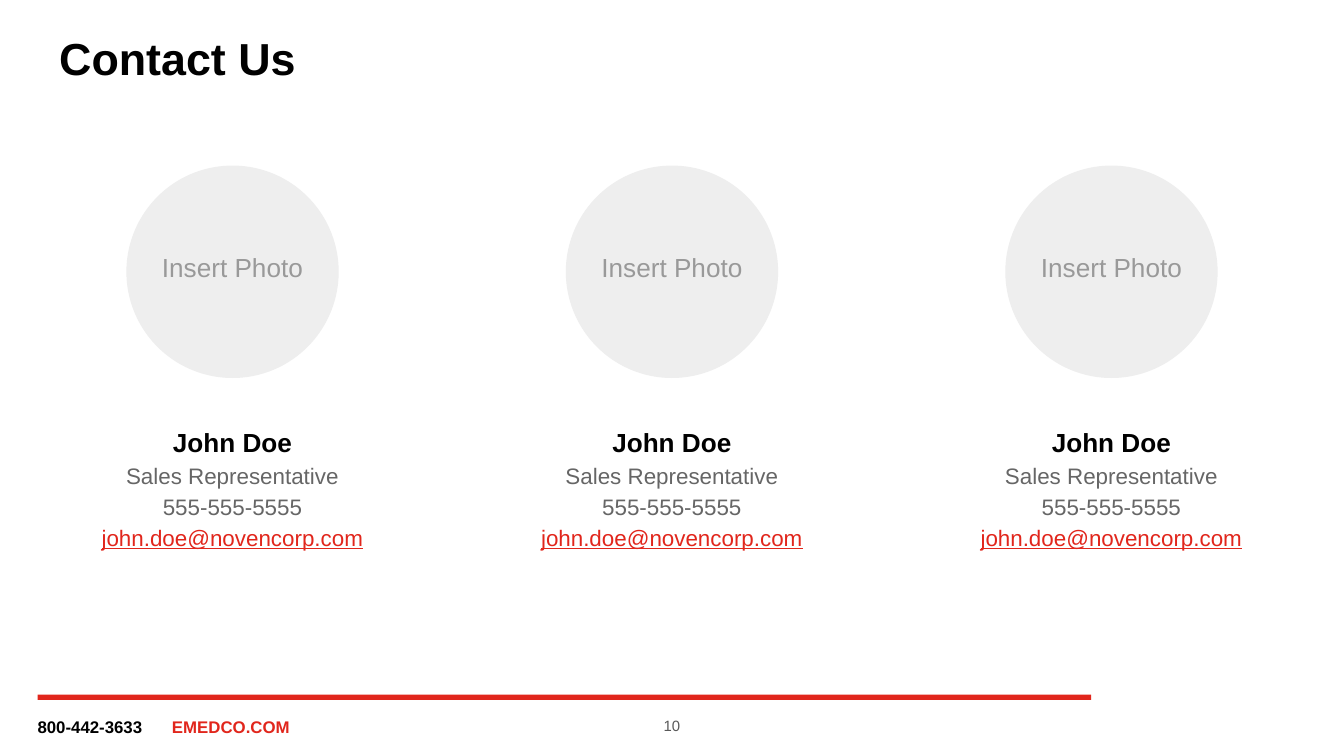
import copy
from dataclasses import dataclass

import pptx
import pptx.dml.color
import pptx.enum.shapes
import pptx.enum.text
import pptx.oxml
import pptx.oxml.ns
import pptx.util

WIDE = pptx.util.Inches(10)
HIGH = pptx.util.Inches(5.625)
FONT = "Arial"
HUES = {
    "red": "E1261C",
    "black": "000000",
    "grey": "666666",
    "page": "595959",
    "hint": "999999",
    "disc": "EEEEEE",
}
SHAPE = pptx.enum.shapes.MSO_SHAPE
ALIGN = pptx.enum.text.PP_ALIGN
ANCHOR = pptx.enum.text.MSO_ANCHOR


@dataclass(frozen=True)
class Box:
    """Place in percent of the slide's width and height."""

    left: float
    top: float
    width: float
    height: float

    def shift(self, cols: int) -> "Box":
        return Box(self.left + cols * PITCH, self.top, self.width, self.height)

    def spots(self) -> tuple[int, int, int, int]:
        return (
            round(WIDE * self.left / 100),
            round(HIGH * self.top / 100),
            round(WIDE * self.width / 100),
            round(HIGH * self.height / 100),
        )


@dataclass(frozen=True)
class Run:
    text: str
    size: float
    hue: str
    bold: bool = False
    under: bool = False


@dataclass(frozen=True)
class Person:
    name: str
    role: str
    phone: str
    mail: str

    def lines(self) -> list[list[Run]]:
        return [
            [Run(self.name, 14, "black", bold=True)],
            [Run(self.role, 12, "grey")],
            [Run(self.phone, 12, "grey")],
            [Run(self.mail, 12, "red", under=True)],
        ]


PITCH = 32.7
TITLE = Box(3.4, 2.3, 93.2, 9.8)
CARD = Box(3.4, 54.05, 27.8, 24.2)
DISC = Box(9.4, 21.9, 15.8, 28.1)
HINT = Box(10.85, 30.8, 12.9, 10.1)
RULE = Box(2.8, 91.9, 78.4, 0.7)
FOOT = Box(2.8, 93, 29.4, 4.6)
PAGE = Box(47, 93.7, 6, 4.6)
STAFF = [
    Person("John Doe", "Sales Representative", "555-555-5555", "john.doe@novencorp.com")
] * 3


def tint(hue: str) -> pptx.dml.color.RGBColor:
    return pptx.dml.color.RGBColor.from_string(HUES[hue])


def place(shape, box: Box) -> None:
    shape.left, shape.top, shape.width, shape.height = box.spots()


def write(shape, lines: list[list[Run]], align=ALIGN.CENTER,
          space: float = 1.0, anchor=ANCHOR.TOP, inset: float = 0.1,
          tab: float = 0) -> None:
    frame = shape.text_frame
    frame.word_wrap = True
    frame.auto_size = pptx.enum.text.MSO_AUTO_SIZE.NONE
    frame.vertical_anchor = anchor
    frame.margin_left = pptx.util.Inches(inset)
    frame.margin_right = frame.margin_top = frame.margin_bottom = pptx.util.Inches(0.1)
    for row, runs in enumerate(lines):
        para = frame.add_paragraph() if row else frame.paragraphs[0]
        para.alignment = align
        para.line_spacing = space
        para.space_before = para.space_after = pptx.util.Pt(0)
        props = para._p.get_or_add_pPr()
        props.set("marL", "0")
        props.set("indent", "0")
        pptx.oxml.parse_xml
        props.append(copy.deepcopy(PLAIN))
        if tab:
            stops = props.makeelement(pptx.oxml.ns.qn("a:tabLst"), {})
            stop = stops.makeelement(
                pptx.oxml.ns.qn("a:tab"),
                {"pos": str(round(WIDE * tab / 100)), "algn": "l"},
            )
            stops.append(stop)
            props.append(stops)
        for item in runs:
            run = para.add_run()
            run.text = item.text
            run.font.name = FONT
            run.font.size = pptx.util.Pt(item.size)
            run.font.bold = item.bold
            run.font.underline = item.under
            run.font.color.rgb = tint(item.hue)


PLAIN = pptx.oxml.parse_xml(
    '<a:buNone xmlns:a="http://schemas.openxmlformats.org/drawingml/2006/main"/>'
)


def fill(shapes, kind, box: Box, hue: str) -> None:
    shape = shapes.add_shape(kind, *box.spots())
    shape.shadow.inherit = False
    shape.fill.solid()
    shape.fill.fore_color.rgb = tint(hue)
    shape.line.fill.background()


def photo(slide, col: int) -> None:
    group = slide.shapes.add_group_shape()
    fill(group.shapes, SHAPE.OVAL, DISC.shift(col), "disc")
    hint = group.shapes.add_textbox(*HINT.shift(col).spots())
    write(hint, [[Run("Insert Photo", 14, "hint")]], space=1.15)


def footer(slide) -> None:
    fill(slide.shapes, SHAPE.RECTANGLE, RULE, "red")
    foot = slide.shapes.add_textbox(*FOOT.spots())
    runs = [Run("800-442-3633\t", 9, "black", bold=True),
            Run("EMEDCO.COM", 9, "red", bold=True)]
    write(foot, [runs], align=ALIGN.LEFT, inset=0, tab=9.15)
    page = slide.shapes.add_textbox(*PAGE.spots())
    write(page, [[Run("10", 8, "page")]], anchor=ANCHOR.MIDDLE)


def main() -> None:
    deck = pptx.Presentation()
    deck.slide_width, deck.slide_height = WIDE, HIGH
    slide = deck.slides.add_slide(deck.slide_layouts[4])
    footer(slide)
    title = slide.shapes.title
    place(title, TITLE)
    write(title, [[Run("Contact Us", 24, "black", bold=True)]], align=ALIGN.LEFT)
    cards = [card for card in slide.placeholders if card != title]
    for spare in cards[len(STAFF):]:
        spare.element.getparent().remove(spare.element)
    for col, (card, person) in enumerate(zip(cards, STAFF)):
        place(card, CARD.shift(col))
        write(card, person.lines(), space=1.15)
        photo(slide, col)
    deck.save("out.pptx")


if __name__ == "__main__":
    main()
